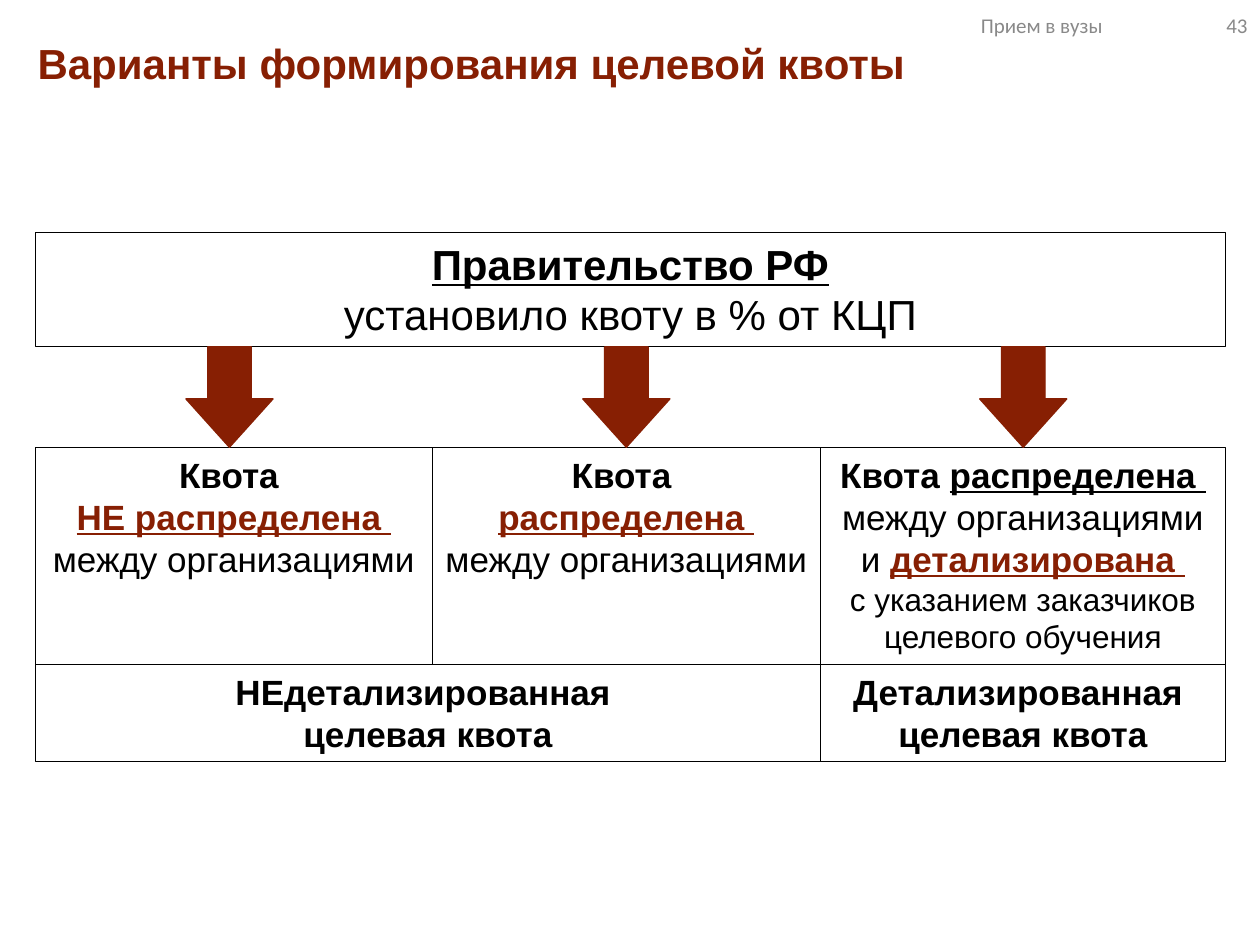
from dataclasses import dataclass

from pptx import Presentation
from pptx.dml.color import RGBColor
from pptx.enum.shapes import MSO_SHAPE
from pptx.enum.text import MSO_ANCHOR, PP_ALIGN
from pptx.slide import Slide
from pptx.text.text import TextFrame
from pptx.util import Pt

BLACK = "000000"
WHITE = "FFFFFF"
GRAY = "898989"
MAROON = "871F03"


@dataclass(frozen=True)
class Run:
    text: str
    size: float = 20
    bold: bool = False
    underline: bool = False
    color: str = BLACK
    font: str = "Arial"


@dataclass(frozen=True)
class Area:
    left: float
    top: float
    width: float
    height: float

    def lengths(self) -> list[Pt]:
        return [Pt(value) for value in (self.left, self.top, self.width, self.height)]


@dataclass(frozen=True)
class Box:
    area: Area
    lines: list[list[Run]]


def rgb(color: str) -> RGBColor:
    return RGBColor.from_string(color)


def write(frame: TextFrame, lines: list[list[Run]], alignment: PP_ALIGN,
          anchor: MSO_ANCHOR = MSO_ANCHOR.TOP, spacing: float = 1.0) -> None:
    frame.word_wrap = True
    frame.vertical_anchor = anchor
    for index, line in enumerate(lines):
        paragraph = frame.add_paragraph() if index else frame.paragraphs[0]
        paragraph.alignment = alignment
        paragraph.line_spacing = spacing
        for item in line:
            run = paragraph.add_run()
            run.text = item.text
            run.font.size = Pt(item.size)
            run.font.name = item.font
            run.font.bold = item.bold
            run.font.underline = item.underline
            run.font.color.rgb = rgb(item.color)


def draw_shape(slide: Slide, kind: MSO_SHAPE, area: Area, fill: str, line: str, weight: float):
    shape = slide.shapes.add_shape(kind, *area.lengths())
    shape.shadow.inherit = False
    shape.fill.solid()
    shape.fill.fore_color.rgb = rgb(fill)
    shape.line.color.rgb = rgb(line)
    shape.line.width = Pt(weight)
    return shape


def draw_box(slide: Slide, box: Box) -> None:
    shape = draw_shape(slide, MSO_SHAPE.RECTANGLE, box.area, WHITE, BLACK, 0.25)
    write(shape.text_frame, box.lines, PP_ALIGN.CENTER)


def draw_arrow(slide: Slide, area: Area) -> None:
    shape = draw_shape(slide, MSO_SHAPE.DOWN_ARROW, area, MAROON, MAROON, 0.75)
    shape.adjustments[0] = 0.5
    shape.adjustments[1] = 0.555


def draw_header(slide: Slide, area: Area, text: str) -> None:
    shape = slide.shapes.add_textbox(*area.lengths())
    write(shape.text_frame, [[Run(text, 12, color=GRAY, font="Calibri")]],
          PP_ALIGN.RIGHT, MSO_ANCHOR.MIDDLE)


LEFT = 20.2
SECOND, THIRD, RIGHT = LEFT + 226.8, 468.9, 700.2
OPTIONS_TOP, RESULTS_TOP = 255.6, 379.6
OPTION_HEIGHT, RESULT_HEIGHT = 138.2, 55.4
AMONG = Run("между организациями")

BOXES = [
    Box(Area(SECOND, OPTIONS_TOP, THIRD - SECOND, OPTION_HEIGHT), [
        [Run("Квота ", bold=True)],
        [Run("распределена ", bold=True, underline=True, color=MAROON)],
        [AMONG],
    ]),
    Box(Area(LEFT, 132.5, RIGHT - LEFT, 65.5), [
        [Run("Правительство РФ", 24, bold=True, underline=True)],
        [Run("установило квоту в % от КЦП", 24)],
    ]),
    Box(Area(LEFT, OPTIONS_TOP, SECOND - LEFT, OPTION_HEIGHT), [
        [Run("Квота ", bold=True)],
        [Run("НЕ распределена ", bold=True, underline=True, color=MAROON)],
        [AMONG],
    ]),
    Box(Area(THIRD, OPTIONS_TOP, RIGHT - THIRD, RESULTS_TOP - OPTIONS_TOP), [
        [Run("Квота ", bold=True), Run("распределена ", bold=True, underline=True)],
        [AMONG],
        [Run("и "), Run("детализирована ", bold=True, underline=True, color=MAROON)],
        [Run("с указанием заказчиков целевого обучения", 18)],
    ]),
    *[Box(Area(left, RESULTS_TOP, right - left, RESULT_HEIGHT), [
        [Run(name, bold=True)],
        [Run("целевая квота", bold=True)],
    ]) for left, right, name in (
        (LEFT, THIRD, "НЕдетализированная "),
        (THIRD, RIGHT, "Детализированная "),
    )],
]


def main() -> None:
    presentation = Presentation()
    presentation.slide_width, presentation.slide_height = Pt(720), Pt(540)
    slide = presentation.slides.add_slide(presentation.slide_layouts[6])

    title = slide.shapes.add_textbox(*Area(14.4, 20.9, 705.6, 33.8).lengths())
    write(title.text_frame, [[Run("Варианты формирования целевой квоты", 24, True, color=MAROON)]],
          PP_ALIGN.LEFT, spacing=0.9)

    for box in BOXES:
        draw_box(slide, box)
    for column in range(3):
        draw_arrow(slide, Area(106.2 + column * (SECOND - LEFT), 198.2, 49.8, 57.4))

    draw_header(slide, Area(507.6, 0, 129.6, 28.8), "Прием в вузы")
    draw_header(slide, Area(637.2, 0, 82.8, 28.8), "43")
    presentation.save("out.pptx")


if __name__ == "__main__":
    main()
